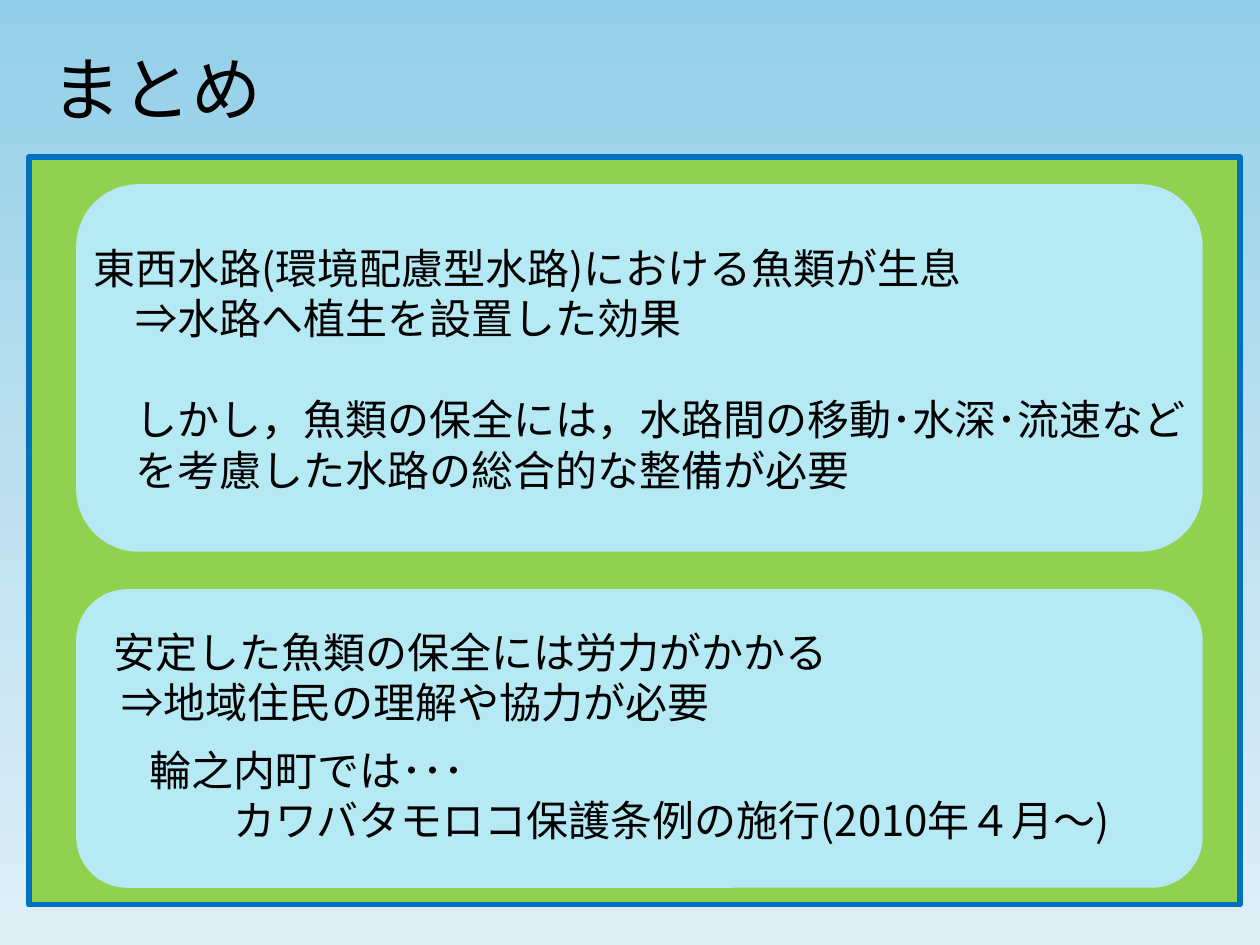
from copy import deepcopy

from pptx import Presentation
from pptx.dml.color import RGBColor
from pptx.enum.shapes import MSO_SHAPE
from pptx.enum.text import MSO_ANCHOR, PP_ALIGN
from pptx.oxml.ns import qn
from pptx.util import Emu, Pt

PX = 914400 // 126
RECTANGLE, ROUNDED = MSO_SHAPE.RECTANGLE, MSO_SHAPE.ROUNDED_RECTANGLE
TOP, LEFT = MSO_ANCHOR.TOP, PP_ALIGN.LEFT

BLACK = RGBColor(0x00, 0x00, 0x00)
GREEN = RGBColor(0x92, 0xD0, 0x50)
BLUE = RGBColor(0x00, 0x70, 0xC0)
PALE_BLUE = RGBColor(0xB5, 0xE9, 0xF4)
SKY = [(0, RGBColor(0x92, 0xCF, 0xE8)),
       (0.5, RGBColor(0xBD, 0xE0, 0xEF)),
       (1, RGBColor(0xDF, 0xEF, 0xF6))]

SERIF, SANS = "TeX Gyre Schola", "Noto Sans CJK JP"
EM = 42  # one full-width character at body size, in px

# Content: paragraphs are (first-line indent px, space before pt, runs)
TITLE = ("まとめ", (39, 39, 522, 98))
PANELS = [
    (RECTANGLE, (29, 157, 1211, 748), GREEN, BLUE, 3),
    (ROUNDED, (78, 591, 1123, 295), PALE_BLUE, PALE_BLUE, 2),
    (ROUNDED, (78, 186, 1123, 364), PALE_BLUE, PALE_BLUE, 2),
]
NOTES = [
    ((39, 236, 1221, 267), [
        (EM, 0, [("東西水路(環境配慮型水路)における", SANS), ("魚類が生息", SERIF)]),
        (2 * EM, 0, [("⇒水路へ植生を設置した効果", SERIF)]),
        (2 * EM, 29, [("しかし，魚類の保全には，水路間の移動･水深･流速など", SERIF)]),
        (2 * EM, 0, [("を考慮した水路の総合的な整備が必要", SERIF)]),
    ]),
    ((59, 620, 1172, 115), [
        (EM, 0, [("安定した魚類の保全には労力がかかる", SERIF)]),
        (EM + 8, 0, [("⇒地域住民の理解や協力が必要", SERIF)]),
    ]),
    ((137, 738, 1000, 115), [
        (0, 0, [("輪之内町では･･･", SERIF)]),
        (2 * EM, 0, [("カワバタモロコ保護条例の施行", SERIF), ("(2010年４月～)", SANS)]),
    ]),
]


def emu(box):
    return [Emu(length * PX) for length in box]


def format_run(run, size, font):
    run.font.size = Pt(size)
    run.font.name = font
    run.font.color.rgb = BLACK
    east_asian = run.font._element.makeelement(qn("a:ea"), {"typeface": SANS})
    run.font._element.find(qn("a:latin")).addnext(east_asian)


def paint_background(slide):
    fill = slide.background.fill
    fill.gradient()
    fill.gradient_angle = 270
    stop_list = next(slide.element.iter(qn("a:gsLst")))
    stop_list.insert(1, deepcopy(stop_list[0]))
    for stop, (position, color) in zip(fill.gradient_stops, SKY):
        stop.position = position
        stop.color.rgb = color


def add_title(slide, text, box):
    title = slide.shapes.title
    title.left, title.top, title.width, title.height = emu(box)
    frame = title.text_frame
    frame.text = text
    frame.vertical_anchor = TOP
    para = frame.paragraphs[0]
    para.alignment = LEFT
    format_run(para.runs[0], 40, SERIF)


def add_panel(slide, kind, box, color, line_color, line_width):
    panel = slide.shapes.add_shape(kind, *emu(box))
    panel.shadow.inherit = False
    panel.fill.solid()
    panel.fill.fore_color.rgb = color
    panel.line.color.rgb = line_color
    panel.line.width = Pt(line_width)


def add_note(slide, box, paragraphs):
    frame = slide.shapes.add_textbox(*emu(box)).text_frame
    frame.word_wrap = True
    for index, (indent, space, pieces) in enumerate(paragraphs):
        para = frame.add_paragraph() if index else frame.paragraphs[0]
        para.space_before = Pt(space)
        properties = para._p.get_or_add_pPr()
        properties.set("marL", "0")
        properties.set("indent", str(indent * PX))
        for text, font in pieces:
            run = para.add_run()
            run.text = text
            format_run(run, 24, font)


def main():
    deck = Presentation()
    deck.slide_width, deck.slide_height = emu((1260, 945))
    slide = deck.slides.add_slide(deck.slide_layouts[5])
    paint_background(slide)
    add_title(slide, *TITLE)
    for panel in PANELS:
        add_panel(slide, *panel)
    for note in NOTES:
        add_note(slide, *note)
    deck.save("out.pptx")


if __name__ == "__main__":
    main()
